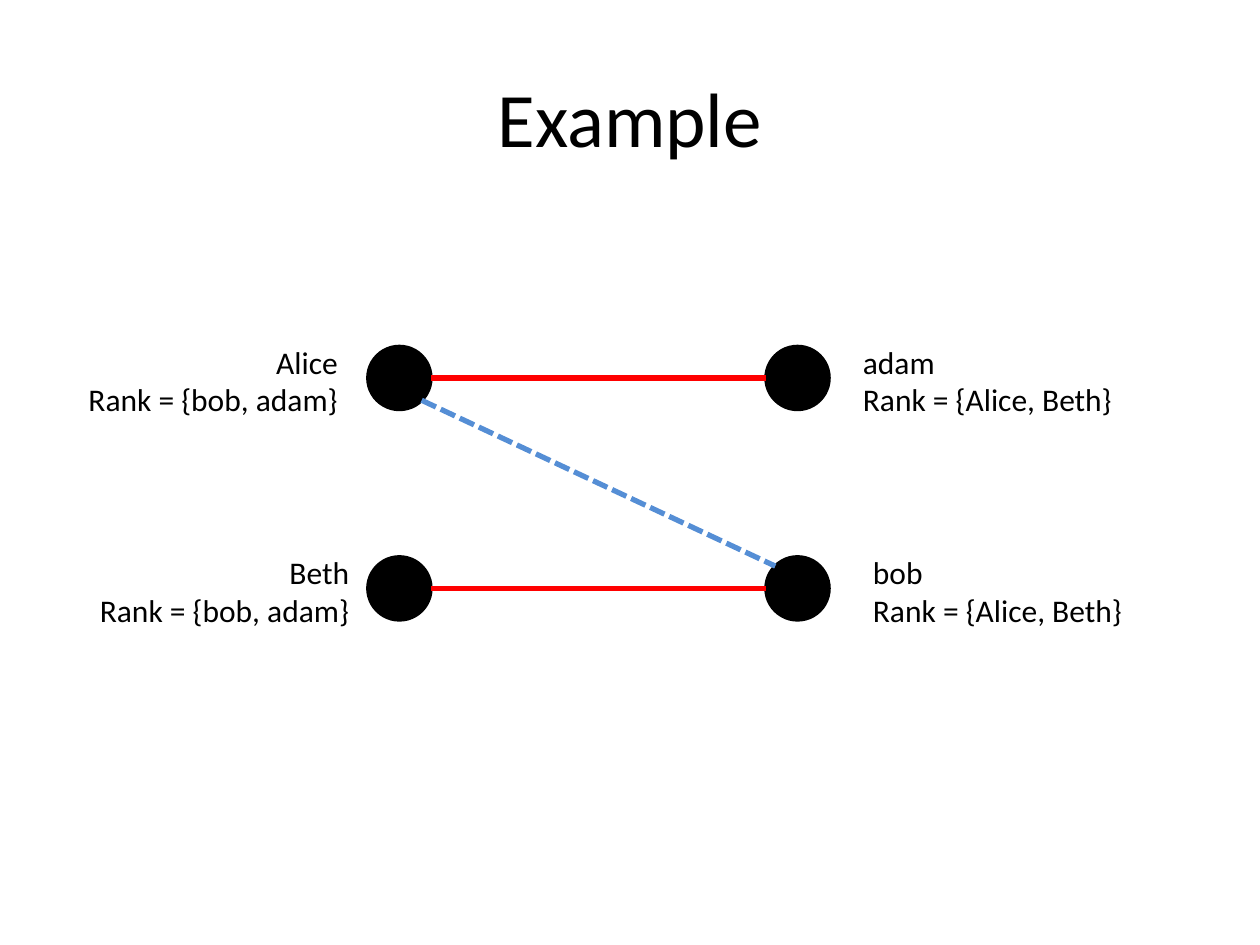
from math import sqrt

from pptx import Presentation
from pptx.dml.color import RGBColor
from pptx.enum.dml import MSO_LINE_DASH_STYLE as Dash
from pptx.enum.shapes import MSO_CONNECTOR as Connector, MSO_SHAPE as Shape
from pptx.enum.text import MSO_ANCHOR as Anchor, PP_ALIGN as Align
from pptx.oxml import parse_xml
from pptx.oxml.ns import nsdecls
from pptx.util import Inches, Pt

COLORS = {"ink": "000000", "match": "FF0000", "blocking": "558ED5"}
RADIUS = 0.25


class MatchingSlide:
    """Draws the parts of a stable matching diagram in one style."""

    def __init__(self, slide, font="Calibri"):
        self.shapes = slide.shapes
        self.font = font

    def color(self, name):
        return RGBColor.from_string(COLORS[name])

    def text(self, lines, box, size, align, anchor=Anchor.TOP, wrap=False):
        frame = self.shapes.add_textbox(*map(Inches, box)).text_frame
        frame.word_wrap = wrap
        frame.vertical_anchor = anchor
        frame.text = "\n".join(lines)
        for paragraph in frame.paragraphs:
            paragraph.alignment = align
            for run in paragraph.runs:
                run.font.name = self.font
                run.font.size = Pt(size)
                run.font.color.rgb = self.color("ink")

    def node(self, x, y):
        box = (x - RADIUS, y - RADIUS, 2 * RADIUS, 2 * RADIUS)
        circle = self.shapes.add_shape(Shape.OVAL, *map(Inches, box))
        circle.shadow.inherit = False
        circle.fill.solid()
        circle.fill.fore_color.rgb = self.color("ink")
        circle.line.color.rgb = self.color("ink")
        circle.line.width = Pt(2)

    def edge(self, start, end, color, dash=None):
        edge = self.shapes.add_connector(
            Connector.STRAIGHT, *map(Inches, (*start, *end)))
        edge.line.color.rgb = self.color(color)
        edge.line.width = Pt(3)
        edge.line.dash_style = dash
        edge._element.spPr.append(parse_xml(f"<a:effectLst {nsdecls('a')}/>"))


def main():
    deck = Presentation()
    deck.slide_width, deck.slide_height = Inches(10), Inches(7.5)
    diagram = MatchingSlide(deck.slides.add_slide(deck.slide_layouts[6]))

    diagram.text(["Example"], (0.5, 0.3, 9, 1.25), 44, Align.CENTER,
                 Anchor.MIDDLE, wrap=True)

    left, right = 3.17, 6.33
    top, bottom = 3, 4.67
    for x in (left, right):
        for y in (top, bottom):
            diagram.node(x, y)

    people = [
        ("Alice", "bob, adam", 0.58, top, Align.RIGHT),
        ("Beth", "bob, adam", 0.67, bottom, Align.RIGHT),
        ("adam", "Alice, Beth", 6.75, top, Align.LEFT),
        ("bob", "Alice, Beth", 6.83, bottom, Align.LEFT),
    ]
    for person, ranking, x, y, align in people:
        diagram.text([person, f"Rank = {{{ranking}}}"],
                     (x, y - 0.33, 2.2, 0.71), 18, align)

    for y in (top, bottom):
        diagram.edge((left + RADIUS, y), (right - RADIUS, y), "match")
    diagonal = RADIUS / sqrt(2)
    diagram.edge((left + diagonal, top + diagonal),
                 (right - diagonal, bottom - diagonal),
                 "blocking", Dash.SQUARE_DOT)

    deck.save("out.pptx")


if __name__ == "__main__":
    main()
